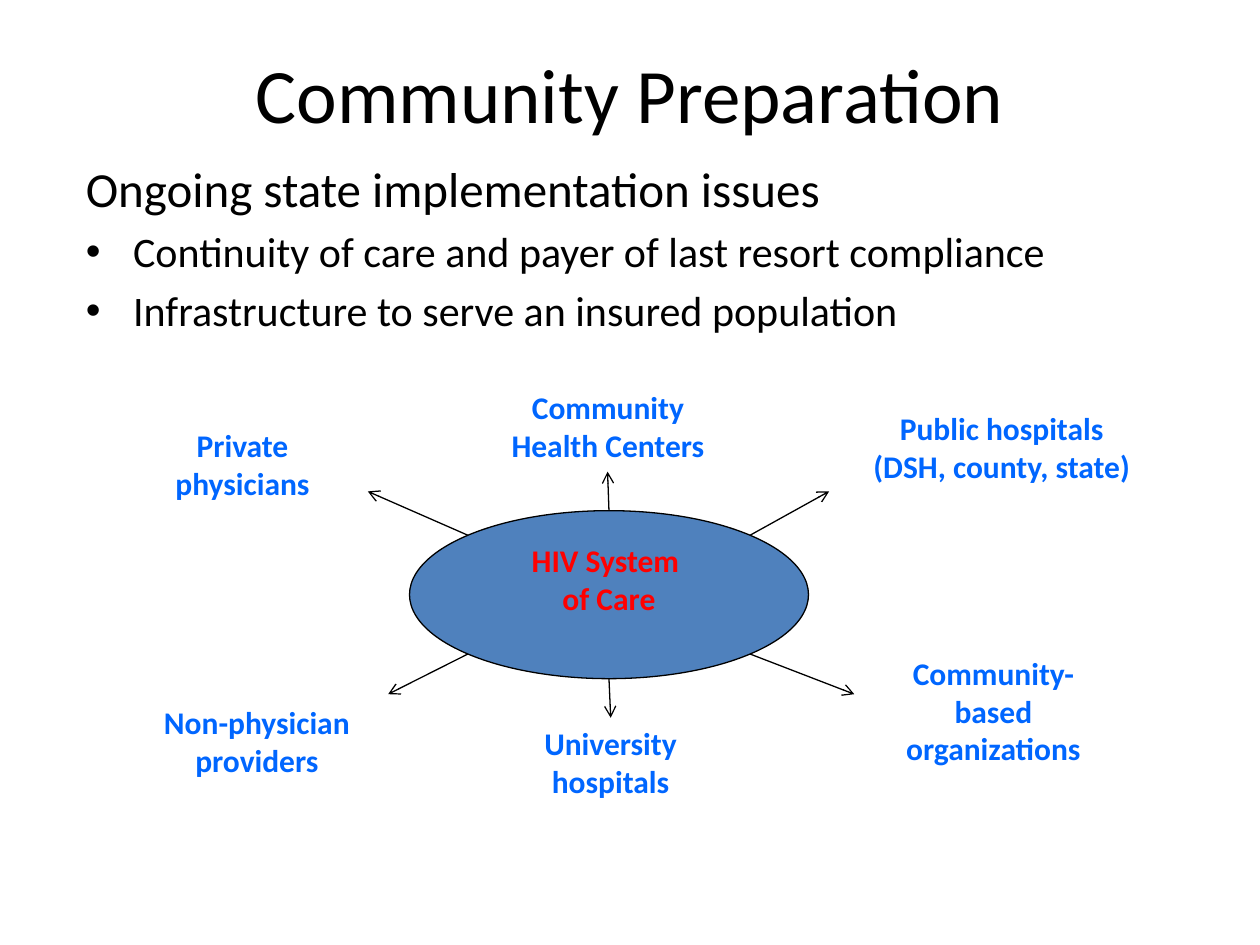
from dataclasses import dataclass
from math import cos, radians, sin

from lxml import etree
from pptx import Presentation
from pptx import util as u
from pptx.dml.color import RGBColor
from pptx.enum import shapes, text
from pptx.oxml.ns import qn


@dataclass(frozen=True)
class Theme:
    font: str = "Calibri"
    ink: str = "000000"
    core: str = "4F81BD"
    core_text: str = "FF0000"
    label: str = "0066FF"
    title_size: float = 44
    lead_size: float = 28
    bullet_size: float = 24
    label_size: float = 18
    line_width: float = 0.75


class SlideBuilder:
    def __init__(self, deck, theme):
        self.theme = theme
        self.page = deck.slides.add_slide(deck.slide_layouts[1])

    def add_span(self, para, words, size, color, bold=False):
        span = para.add_run()
        span.text = words
        formats = {"name": self.theme.font, "size": u.Pt(size), "bold": bold}
        for name, value in formats.items():
            setattr(span.font, name, value)
        span.font.color.rgb = RGBColor.from_string(color)

    def place(self, box, left, top, width, height):
        edges = {"left": left, "top": top, "width": width, "height": height}
        for name, value in edges.items():
            setattr(box, name, u.Pt(value))

    def stroke(self, line):
        line.color.rgb = RGBColor.from_string(self.theme.ink)
        line.width = u.Pt(self.theme.line_width)

    def title(self, words, *bounds):
        box = self.page.shapes.title
        self.place(box, *bounds)
        box.text_frame.vertical_anchor = text.MSO_ANCHOR.MIDDLE
        para = box.text_frame.paragraphs[0]
        para.alignment = text.PP_ALIGN.CENTER
        self.add_span(para, words, self.theme.title_size, self.theme.ink)

    def body(self, lead, bullets, *bounds):
        box = self.page.placeholders[1]
        self.place(box, *bounds)
        frame = box.text_frame
        frame.auto_size = text.MSO_AUTO_SIZE.NONE
        para = frame.paragraphs[0]
        props = para._p.get_or_add_pPr()
        props.set("marL", "0")
        props.set("indent", "0")
        etree.SubElement(props, qn("a:buNone"))
        para.space_before = u.Pt(0)
        self.add_span(para, lead, self.theme.lead_size, self.theme.ink)
        for words in bullets:
            self.add_span(frame.add_paragraph(), words, self.theme.bullet_size, self.theme.ink)

    def ellipse(self, lines, *bounds):
        box = self.page.shapes.add_shape(shapes.MSO_SHAPE.OVAL, *map(u.Pt, bounds))
        box.shadow.inherit = False
        box.fill.solid()
        box.fill.fore_color.rgb = RGBColor.from_string(self.theme.core)
        self.stroke(box.line)
        frame = box.text_frame
        frame.vertical_anchor = text.MSO_ANCHOR.TOP
        for index, words in enumerate(lines):
            para = frame.add_paragraph() if index else frame.paragraphs[0]
            para.alignment = text.PP_ALIGN.CENTER
            self.add_span(para, words, self.theme.label_size, self.theme.core_text, True)

    def label(self, words, *bounds):
        box = self.page.shapes.add_textbox(*map(u.Pt, bounds))
        frame = box.text_frame
        frame.word_wrap = True
        frame.auto_size = text.MSO_AUTO_SIZE.SHAPE_TO_FIT_TEXT
        para = frame.paragraphs[0]
        para.alignment = text.PP_ALIGN.CENTER
        self.add_span(para, words, self.theme.label_size, self.theme.label, True)

    def arrow(self, *ends):
        connector = self.page.shapes.add_connector(
            shapes.MSO_CONNECTOR.STRAIGHT, *map(u.Pt, ends))
        self.stroke(connector.line)
        props = connector._element.spPr
        etree.SubElement(props.get_or_add_ln(), qn("a:tailEnd"), type="arrow")
        etree.SubElement(props, qn("a:effectLst"))


def main():
    deck = Presentation()
    deck.slide_width, deck.slide_height = u.Pt(720), u.Pt(540)
    slide = SlideBuilder(deck, Theme())
    slide.title("Community Preparation", 36, 21.6, 648, 62.6)
    slide.body(
        "Ongoing state implementation issues",
        ["Continuity of care and payer of last resort compliance",
         "Infrastructure to serve an insured population"],
        41.8, 87.1, 648, 356.4)

    left, top, width, height = 234, 291.8, 228, 96
    slide.ellipse(["HIV System ", "of Care"], left, top, width, height)

    partners = [
        ("Community Health Centers", (273.6, 218.2, 147.6, 51), -90, (347.2, 269.5)),
        ("Public hospitals (DSH, county, state)", (488.2, 230.4, 168.5, 72.7), -45, (473.8, 280.8)),
        ("Community-based organizations", (501.8, 370.1, 131.8, 72.7), 45, (488.2, 396.7)),
        ("University hospitals", (283, 410.4, 131.8, 51), 90, (349, 410.2)),
        ("Non-physician providers", (62.6, 398.2, 168.5, 51), 135, (221.8, 396.7)),
        ("Private physicians", (72.7, 239.8, 131.8, 51), -135, (210.2, 280.8)),
    ]
    for words, bounds, angle, tip in partners:
        slide.label(words, *bounds)
        start_x = left + width / 2 * (1 + cos(radians(angle)))
        start_y = top + height / 2 * (1 + sin(radians(angle)))
        slide.arrow(start_x, start_y, *tip)

    deck.save("out.pptx")


if __name__ == "__main__":
    main()
